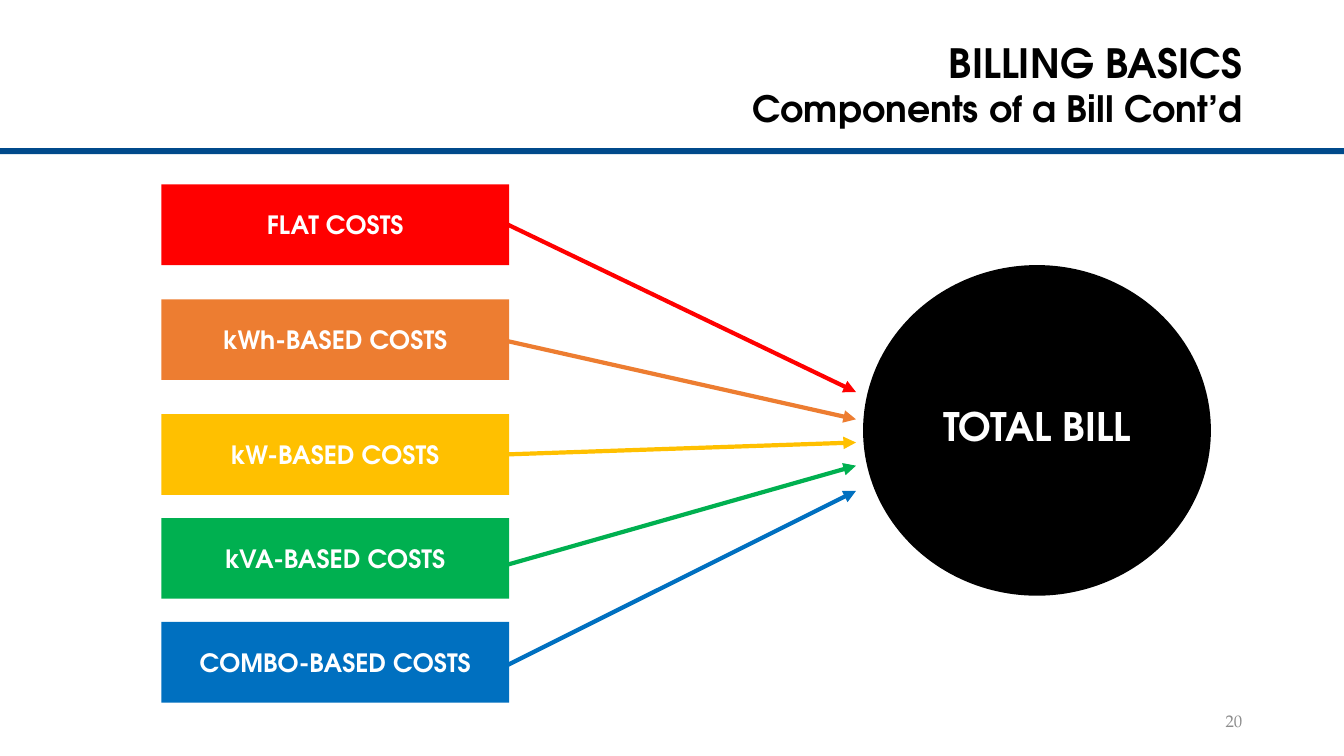
from lxml import etree
from pptx import Presentation
from pptx.dml.color import RGBColor
from pptx.enum.shapes import MSO_CONNECTOR, MSO_SHAPE
from pptx.enum.text import MSO_ANCHOR, PP_ALIGN
from pptx.oxml.ns import qn
from pptx.util import Inches, Pt

RECT, OVAL = MSO_SHAPE.RECTANGLE, MSO_SHAPE.OVAL
STRAIGHT = MSO_CONNECTOR.STRAIGHT
TOP, MIDDLE = MSO_ANCHOR.TOP, MSO_ANCHOR.MIDDLE
CENTER, RIGHT = PP_ALIGN.CENTER, PP_ALIGN.RIGHT
HEADING_FONT, NUMBER_FONT = "TeX Gyre Adventor", "TeX Gyre Pagella"

SLIDE_WIDTH, SLIDE_HEIGHT = 13.33, 7.5
COST_WIDTH, COST_HEIGHT = 3.45, 0.8
# label, colour, box top, arrow start (x, y), arrow end y
COSTS = [
    ("FLAT COSTS", "FF0000", 1.83, (5.04, 2.23), 3.89),
    ("kWh-BASED COSTS", "ED7D31", 2.97, (4.97, 3.37), 4.16),
    ("kW-BASED COSTS", "FFC000", 4.11, (4.97, 4.51), 4.39),
    ("kVA-BASED COSTS", "00B050", 5.14, (5.04, 5.6), 4.62),
    ("COMBO-BASED COSTS", "0070C0", 6.17, (4.97, 6.63), 4.87),
]


def color(hex_string):
    return RGBColor.from_string(hex_string)


def write(frame, text, size, hex_color, align, anchor=MIDDLE,
          font=HEADING_FONT, bold=True, spacing=1.0):
    frame.word_wrap = True
    frame.vertical_anchor = anchor
    paragraph = frame.paragraphs[0]
    paragraph.text = text
    paragraph.alignment = align
    paragraph.line_spacing = spacing
    paragraph.font.name = font
    paragraph.font.size = Pt(size)
    paragraph.font.bold = bold
    paragraph.font.color.rgb = color(hex_color)


def add_text(slide, box, *args, **style):
    label = slide.shapes.add_textbox(*map(Inches, box))
    write(label.text_frame, *args, **style)


def add_filled(slide, kind, box, fill):
    shape = slide.shapes.add_shape(kind, *map(Inches, box))
    shape.shadow.inherit = False
    shape.fill.solid()
    shape.fill.fore_color.rgb = color(fill)
    shape.line.fill.background()
    return shape


def add_arrow(slide, start, end, hex_color):
    arrow = slide.shapes.add_connector(STRAIGHT, *map(Inches, (*start, *end)))
    arrow.line.color.rgb = color(hex_color)
    arrow.line.width = Pt(3)
    etree.SubElement(arrow.line._get_or_add_ln(), qn("a:tailEnd"), type="triangle")
    etree.SubElement(arrow._element.spPr, qn("a:effectLst"))


def add_header(slide, left, top, width):
    add_filled(slide, RECT, (0, top + 1.07, SLIDE_WIDTH, 0.06), "004A8B")
    add_text(slide, (left, top, width, 0.49), "BILLING BASICS",
             28.8, "000000", RIGHT, spacing=0.9)
    add_text(slide, (left, top + 0.49, width, 0.46), "Components of a Bill Cont’d",
             25.9, "000000", RIGHT, anchor=TOP, spacing=0.8)


def add_cost_flow(slide, left, total_box):
    # Arrows lie behind the boxes
    arrow_end = total_box[0] - 0.07
    for _, fill, _, start, end_y in COSTS:
        add_arrow(slide, start, (arrow_end, end_y), fill)

    # Total, with its label slightly above the centre
    total = add_filled(slide, OVAL, total_box, "000000")
    write(total.text_frame, "TOTAL BILL", 28, "FFFFFF", CENTER)
    total.text_frame.margin_bottom = Inches(0.14)

    # Cost boxes
    for label, fill, top, _, _ in COSTS:
        cost = add_filled(slide, RECT, (left, top, COST_WIDTH, COST_HEIGHT), fill)
        write(cost.text_frame, label, 18, "FFFFFF", CENTER)


def add_page_number(slide, box):
    add_text(slide, box, "20", 12, "8C8C8C", RIGHT, font=NUMBER_FONT, bold=False)


def main():
    deck = Presentation()
    deck.slide_width, deck.slide_height = Inches(SLIDE_WIDTH), Inches(SLIDE_HEIGHT)
    slide = deck.slides.add_slide(deck.slide_layouts[6])
    add_header(slide, 1.89, 0.4, 10.53)
    add_cost_flow(slide, 1.6, (8.56, 2.63, 3.45, 3.28))
    add_page_number(slide, (9.42, 6.95, 3, 0.4))
    deck.save("out.pptx")


if __name__ == "__main__":
    main()
